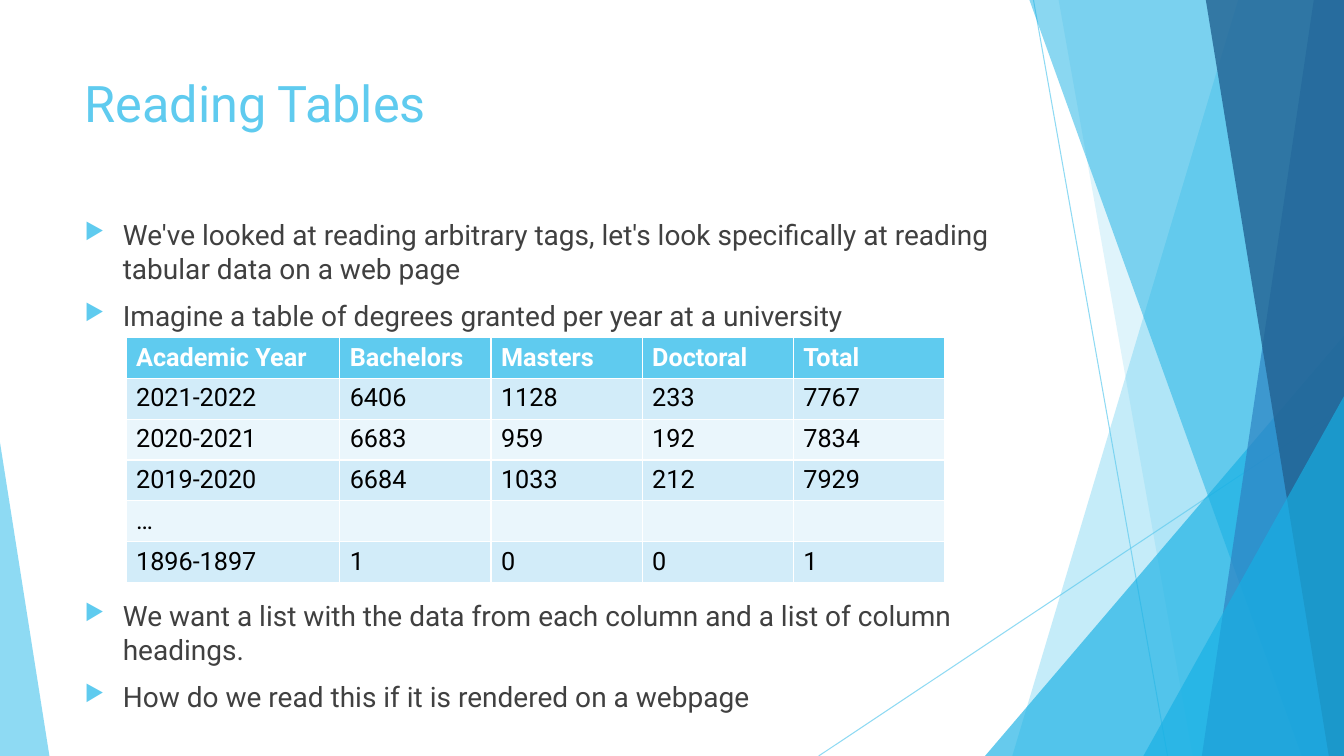
from dataclasses import dataclass

from lxml.etree import SubElement
from pptx import Presentation
from pptx.dml.color import RGBColor
from pptx.enum.shapes import MSO_CONNECTOR, MSO_SHAPE
from pptx.oxml.ns import qn
from pptx.util import Inches, Pt


@dataclass(frozen=True)
class Theme:
    font: str = "Roboto"
    sky: str = "5FCBEF"
    cyan: str = "17B0E4"
    blue: str = "2E83C3"
    navy: str = "226292"
    body: str = "404040"
    black: str = "000000"
    white: str = "FFFFFF"
    bands: tuple = ("D2ECF9", "EAF6FC")
    title_size: int = 36
    body_size: int = 20
    table_size: int = 18


THEME = Theme()
WIDTH, HEIGHT = 13.33, 7.5

INTRODUCTION = [
    "We've looked at reading arbitrary tags, let's look specifically at reading tabular data on a web page",
    "Imagine a table of degrees granted per year at a university",
]
QUESTIONS = [
    "We want a list with the data from each column and a list of column headings.",
    "How do we read this if it is rendered on a webpage",
]
DEGREES = [
    ["Academic Year", "Bachelors", "Masters", "Doctoral", "Total"],
    ["2021-2022", "6406", "1128", "233", "7767"],
    ["2020-2021", "6683", "959", "192", "7834"],
    ["2019-2020", "6684", "1033", "212", "7929"],
    ["…", "", "", "", ""],
    ["1896-1897", "1", "0", "0", "1"],
]


def set_alpha(color_parent, percent):
    color = next(color_parent.iter(qn("a:srgbClr")))
    SubElement(color, qn("a:alpha"), val=str(percent * 1000))


def paint(shape, color, opacity):
    shape.shadow.inherit = False
    shape.fill.solid()
    shape.fill.fore_color.rgb = RGBColor.from_string(color)
    set_alpha(shape.fill._xPr, opacity)
    shape.line.fill.background()


def add_run(paragraph, text, size, color, bold=False):
    run = paragraph.add_run()
    run.text = text
    run.font.name = THEME.font
    run.font.size = Pt(size)
    run.font.bold = bold
    run.font.color.rgb = RGBColor.from_string(color)


def add_text_frame(slide, box):
    frame = slide.shapes.add_textbox(*map(Inches, box)).text_frame
    frame.word_wrap = True
    return frame


def add_thin_line(slide, start, end):
    line = slide.shapes.add_connector(
        MSO_CONNECTOR.STRAIGHT, *map(Inches, (*start, *end)))
    line.line.width = Pt(0.75)
    line.line.color.rgb = RGBColor.from_string(THEME.sky)
    properties = line._element.spPr
    set_alpha(properties, 70)
    SubElement(properties, qn("a:effectLst"))


def add_panel(slide, top_left, bottom_left, color, opacity):
    """Slanted panel that reaches the right edge of the slide."""
    builder = slide.shapes.build_freeform(Inches(top_left), 0)
    corners = [(WIDTH, 0), (WIDTH, HEIGHT), (bottom_left, HEIGHT)]
    builder.add_line_segments(
        [(Inches(x), Inches(y)) for x, y in corners], close=True)
    paint(builder.convert_to_shape(), color, opacity)


def add_corner(slide, box, apex, color, opacity):
    """Right triangle whose apex sits at the left (0) or right (1)."""
    triangle = slide.shapes.add_shape(
        MSO_SHAPE.ISOSCELES_TRIANGLE, *map(Inches, box))
    triangle.adjustments[0] = apex
    paint(triangle, color, opacity)


def add_backdrop(slide):
    # Thin lines
    add_thin_line(slide, (10.25, 0), (11.58, HEIGHT))
    add_thin_line(slide, (WIDTH, 4.03), (8.12, HEIGHT))
    # Facets on the right, from back to front
    add_panel(slide, 12.28, 10.04, THEME.sky, 36)
    add_panel(slide, 10.5, 11.83, THEME.sky, 20)
    add_corner(slide, (9.77, 3.33, 3.56, 4.17), 1, THEME.cyan, 66)
    add_panel(slide, 10.21, 12.91, THEME.cyan, 50)
    add_panel(slide, 13.03, 11.92, THEME.blue, 70)
    add_panel(slide, 11.96, 13.18, THEME.navy, 80)
    add_corner(slide, (11.34, 3.93, 1.99, 3.57), 1, THEME.cyan, 66)
    # Facet on the left
    add_corner(slide, (0, 4.39, 0.49, 3.11), 0, THEME.sky, 70)


def add_title(slide, box, text):
    frame = add_text_frame(slide, box)
    add_run(frame.paragraphs[0], text, THEME.title_size, THEME.sky)


def add_bullets(slide, box, items):
    frame = add_text_frame(slide, box)
    for index, item in enumerate(items):
        paragraph = frame.add_paragraph() if index else frame.paragraphs[0]
        paragraph.space_before = Pt(10 if index else 0)
        properties = paragraph._p.get_or_add_pPr()
        properties.set("marL", str(Inches(0.38)))
        properties.set("indent", str(Inches(-0.38)))
        bullet_color = SubElement(properties, qn("a:buClr"))
        SubElement(bullet_color, qn("a:srgbClr"), val=THEME.sky)
        SubElement(properties, qn("a:buSzPct"), val="80000")
        SubElement(properties, qn("a:buChar"), char="▶")
        add_run(paragraph, item, THEME.body_size, THEME.body)


def add_degree_table(slide, box, rows):
    left, top, width, height = box
    table = slide.shapes.add_table(
        len(rows), len(rows[0]), *map(Inches, box)).table
    # The year column is wider; the others share the rest
    year_width = 2.12
    for index, column in enumerate(table.columns):
        share = (width - year_width) / (len(rows[0]) - 1)
        column.width = Inches(share if index else year_width)
    # Header and banded rows
    for row_index, values in enumerate(rows):
        header = row_index == 0
        fill = THEME.sky if header else THEME.bands[(row_index - 1) % 2]
        color = THEME.white if header else THEME.black
        for column_index, value in enumerate(values):
            cell = table.cell(row_index, column_index)
            cell.fill.solid()
            cell.fill.fore_color.rgb = RGBColor.from_string(fill)
            if value:
                add_run(cell.text_frame.paragraphs[0], value,
                        THEME.table_size, color, header)


def main():
    presentation = Presentation()
    presentation.slide_width = Inches(WIDTH)
    presentation.slide_height = Inches(HEIGHT)
    slide = presentation.slides.add_slide(presentation.slide_layouts[6])
    add_backdrop(slide)
    add_title(slide, (0.74, 0.67, 9.4, 1.44), "Reading Tables")
    add_bullets(slide, (0.74, 2.11, 9.4, 1.24), INTRODUCTION)
    add_degree_table(slide, (1.25, 3.35, 8.12, 2.43), DEGREES)
    add_bullets(slide, (0.74, 5.89, 9.4, 1.24), QUESTIONS)
    presentation.save("out.pptx")


if __name__ == "__main__":
    main()
